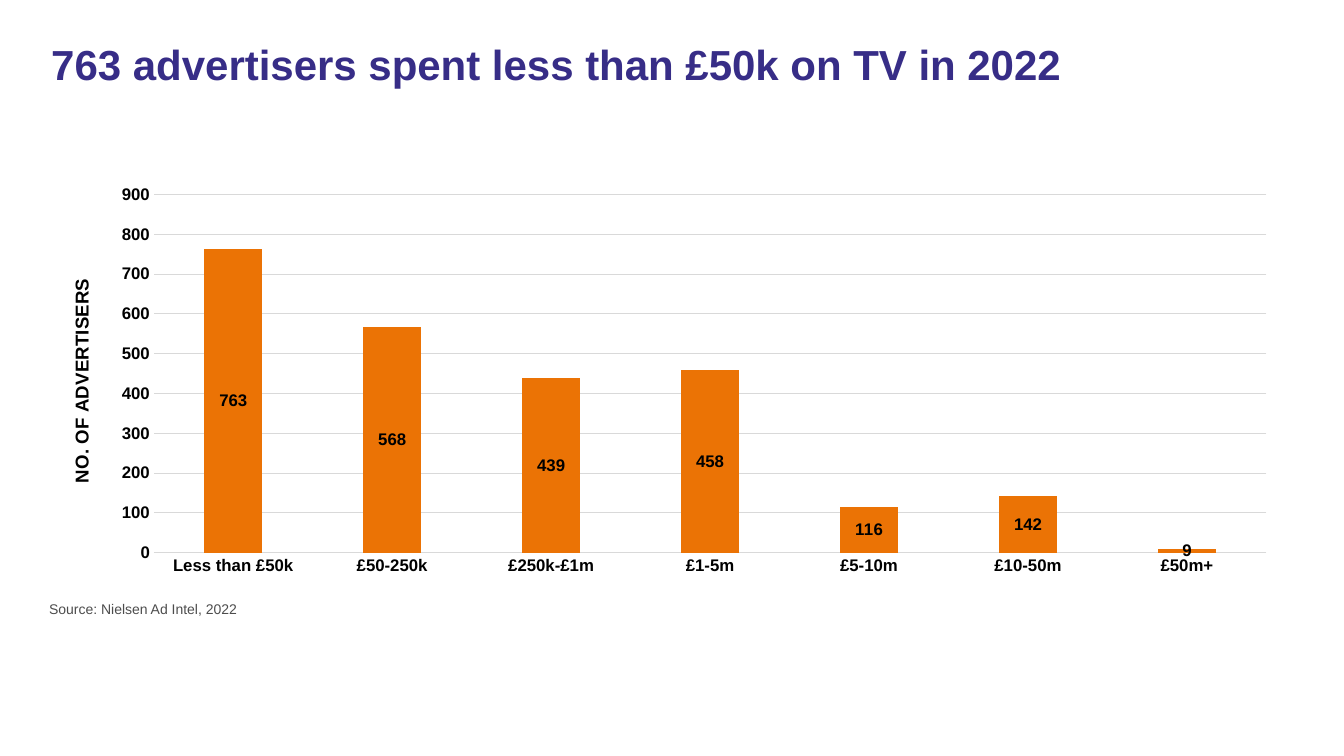
import dataclasses

import pptx
import pptx.chart.data
import pptx.dml.color
import pptx.enum.chart
import pptx.oxml
import pptx.oxml.ns
import pptx.util

Pt = pptx.util.Pt
ChartEnums = pptx.enum.chart


@dataclasses.dataclass(frozen=True)
class Theme:
    font: str = "Arial"
    title_color: str = "372D87"
    source_color: str = "4D4D4D"
    chart_color: str = "000000"
    grid_color: str = "D9D9D9"
    bar_color: str = "EB7305"
    title_size: float = 30
    axis_title_size: float = 13.3
    chart_size: float = 12
    source_size: float = 10


def rgb(color):
    return pptx.dml.color.RGBColor.from_string(color)


def format_font(font, name, size, color, bold=False):
    font.name = name
    font.size = Pt(size)
    font.bold = bold
    font.color.rgb = rgb(color)


def write_text(text_frame, text, *, line_spacing=None, **font_format):
    paragraph = text_frame.paragraphs[0]
    run = paragraph.add_run()
    run.text = text
    paragraph.line_spacing = line_spacing
    format_font(run.font, **font_format)


def manual_layout(inner=False, **fractions):
    target = '<c:layoutTarget val="inner"/>' if inner else ""
    modes = "".join(f'<c:{key}Mode val="edge"/>' for key in "xy")
    values = "".join(f'<c:{key} val="{value}"/>' for key, value in fractions.items())
    namespace = pptx.oxml.ns.nsdecls("c")
    return pptx.oxml.parse_xml(
        f"<c:layout {namespace}><c:manualLayout>{target}{modes}{values}"
        "</c:manualLayout></c:layout>"
    )


def place(element, layout, index):
    for existing in element.findall(pptx.oxml.ns.qn("c:layout")):
        element.remove(existing)
    element.insert(index, layout)


class SlideBuilder:
    def __init__(self, slide, theme):
        self.slide = slide
        self.theme = theme

    def text(self, left, top, width, height, text, **text_format):
        shape = self.slide.shapes.add_textbox(Pt(left), Pt(top), Pt(width), Pt(height))
        shape.text_frame.word_wrap = True
        write_text(shape.text_frame, text, name=self.theme.font, **text_format)

    def chart_font(self, font):
        theme = self.theme
        format_font(font, theme.font, theme.chart_size, theme.chart_color, True)

    def grid_line(self, line):
        line.color.rgb = rgb(self.theme.grid_color)
        line.width = Pt(0.75)

    def column_chart(self, left, top, width, height, values, axis_title):
        data = pptx.chart.data.CategoryChartData()
        data.categories = list(values)
        data.add_series("Series 1", list(values.values()))
        chart = self.slide.shapes.add_chart(
            ChartEnums.XL_CHART_TYPE.COLUMN_CLUSTERED,
            Pt(left), Pt(top), Pt(width), Pt(height), data,
        ).chart
        chart.has_legend = False
        chart.has_title = False
        self.chart_font(chart.font)

        plot = chart.plots[0]
        plot.vary_by_categories = False
        plot.gap_width = 172
        plot.overlap = -30
        fill = plot.series[0].format.fill
        fill.solid()
        fill.fore_color.rgb = rgb(self.theme.bar_color)
        labels = plot.series[0].data_labels
        labels.show_value = True
        labels.position = ChartEnums.XL_LABEL_POSITION.CENTER
        self.chart_font(labels.font)

        category_axis, value_axis = chart.category_axis, chart.value_axis
        for axis in (category_axis, value_axis):
            axis.major_tick_mark = ChartEnums.XL_TICK_MARK.NONE
            axis.minor_tick_mark = ChartEnums.XL_TICK_MARK.NONE
            self.chart_font(axis.tick_labels.font)
        self.grid_line(category_axis.format.line)
        value_axis.format.line.fill.background()
        value_axis.minimum_scale = 0
        value_axis.maximum_scale = 900
        value_axis.major_unit = 100
        value_axis.has_major_gridlines = True
        self.grid_line(value_axis.major_gridlines.format.line)

        title = value_axis.axis_title
        write_text(
            title.text_frame, axis_title, name=self.theme.font,
            size=self.theme.axis_title_size, color=self.theme.chart_color, bold=True,
        )
        title_element = value_axis.axis_title.text_frame._txBody.getparent().getparent()
        place(title_element, manual_layout(x=0.02, y=0.24), 1)
        plot_area = chart._chartSpace.chart.plotArea
        place(plot_area, manual_layout(inner=True, x=0.09, y=0.04, w=0.89, h=0.89), 0)


def main():
    presentation = pptx.Presentation()
    presentation.slide_width = Pt(960)
    presentation.slide_height = Pt(540)
    slide = presentation.slides.add_slide(presentation.slide_layouts[6])
    theme = Theme()
    builder = SlideBuilder(slide, theme)
    builder.text(
        29.5, 28, 860, 80, "763 advertisers spent less than £50k on TV in 2022",
        size=theme.title_size, color=theme.title_color, bold=True, line_spacing=0.9,
    )
    advertisers_by_spend = {
        "Less than £50k": 763,
        "£50-250k": 568,
        "£250k-£1m": 439,
        "£1-5m": 458,
        "£5-10m": 116,
        "£10-50m": 142,
        "£50m+": 9,
    }
    builder.column_chart(
        29.5, 127.5, 893, 287.5, advertisers_by_spend, "NO. OF ADVERTISERS"
    )
    builder.text(
        28, 425.5, 893, 24, "Source: Nielsen Ad Intel, 2022",
        size=theme.source_size, color=theme.source_color,
    )
    presentation.save("out.pptx")


if __name__ == "__main__":
    main()
